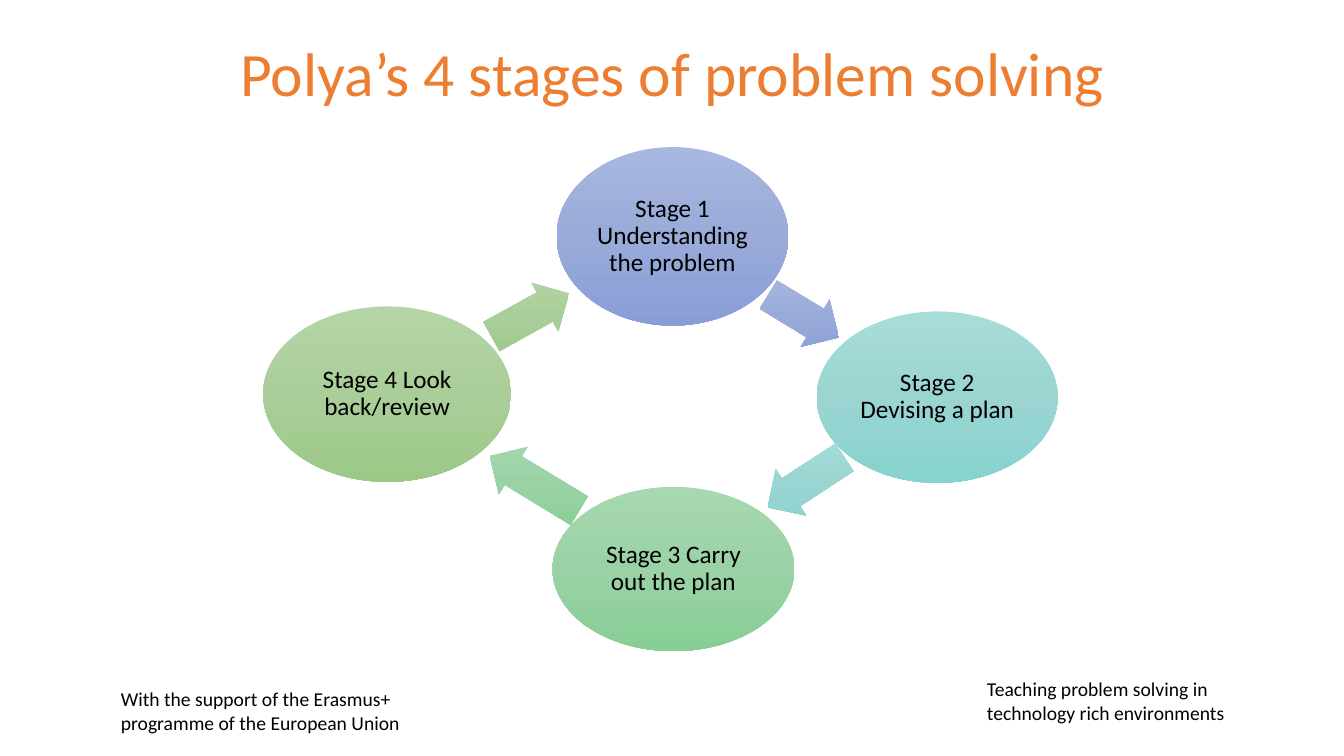
"""Build a slide showing Polya's four-stage problem solving cycle."""
from copy import deepcopy

from pptx import Presentation
from pptx.dml.color import RGBColor
from pptx.enum.shapes import MSO_SHAPE
from pptx.enum.text import MSO_ANCHOR, PP_ALIGN
from pptx.oxml.ns import qn
from pptx.util import Inches, Pt

OVAL, ARROW = MSO_SHAPE.OVAL, MSO_SHAPE.RIGHT_ARROW
MIDDLE, TOP = MSO_ANCHOR.MIDDLE, MSO_ANCHOR.TOP
CENTER, LEFT = PP_ALIGN.CENTER, PP_ALIGN.LEFT

FONT = "Calibri"
COLORS = {"title": "ED7D31", "text": "000000"}
GRADIENTS = {
    "blue": ("A8B7DF", "9AABD9", "889ED7"),
    "teal": ("A8DCD9", "9AD5D2", "87D3CF"),
    "green": ("A7D8B1", "9AD2A5", "87CE96"),
    "olive": ("B5D5A7", "AACE9A", "9CC987"),
}
TITLE = ("Polya’s 4 stages of problem solving", (2.15, 0.33, 9.04, 0.85))
FOOTERS = [
    ("Teaching problem solving in technology rich environments", (9.69, 6.67, 2.58, 0.57)),
    ("With the support of the Erasmus+ programme of the European Union", (1.1, 6.77, 2.98, 0.58)),
]
STAGES = [
    ("Stage 1 Understanding the problem", "blue",
     (5.52, 1.46, 2.3, 1.77), (7.56, 2.86, 0.82, 0.55), 31.3),
    ("Stage 2 Devising a plan", "teal",
     (8.1, 3.09, 2.39, 1.7), (7.54, 4.51, 0.91, 0.55), 146.9),
    ("Stage 3 Carry out the plan", "green",
     (5.48, 4.83, 2.4, 1.63), (4.78, 4.52, 1.04, 0.55), 211.3),
    ("Stage 4 Look back/review", "olive",
     (2.61, 3.04, 2.46, 1.74), (4.82, 2.85, 0.88, 0.55), 331),
]


def write(holder, text, size, color="text", align=LEFT, anchor=TOP, spacing=1.0):
    frame = holder.text_frame
    frame.word_wrap = True
    frame.vertical_anchor = anchor
    paragraph = frame.paragraphs[0]
    paragraph.alignment = align
    paragraph.line_spacing = spacing
    run = paragraph.add_run()
    run.text = text
    run.font.name = FONT
    run.font.size = Pt(size)
    run.font.color.rgb = RGBColor.from_string(COLORS[color])
    return frame


def add_label(slide, text, box, size, **style):
    label = slide.shapes.add_textbox(*map(Inches, box))
    write(label, text, size, **style)


def add_gradient_shape(slide, preset, box, gradient):
    shape = slide.shapes.add_shape(preset, *map(Inches, box))
    shape.shadow.inherit = False
    shape.line.fill.background()
    shape.fill.gradient()
    shape.fill.gradient_angle = 270
    grad_fill = shape._element.spPr.find(qn("a:gradFill"))
    grad_fill.set("rotWithShape", "0")
    first = grad_fill.find(qn("a:gsLst"))[0]
    first.addnext(deepcopy(first))
    for stop, position, color in zip(shape.fill.gradient_stops, (0, 0.5, 1), GRADIENTS[gradient]):
        stop.position = position
        stop.color.rgb = RGBColor.from_string(color)
    return shape


def add_stage(slide, text, gradient, oval_box, arrow_box, angle):
    oval = add_gradient_shape(slide, OVAL, oval_box, gradient)
    frame = write(oval, text, 18, align=CENTER, anchor=MIDDLE, spacing=0.9)
    frame.margin_left = frame.margin_right = Inches(0.03)
    frame.margin_top = frame.margin_bottom = Inches(0.03)
    arrow = add_gradient_shape(slide, ARROW, arrow_box, gradient)
    arrow.adjustments[0] = 0.6
    arrow.adjustments[1] = 0.5
    arrow.rotation = angle


def main():
    deck = Presentation()
    deck.slide_width, deck.slide_height = Inches(13.33), Inches(7.5)
    slide = deck.slides.add_slide(deck.slide_layouts[6])
    for text, box in FOOTERS:
        add_label(slide, text, box, 14)
    add_label(slide, *TITLE, 44, color="title", align=CENTER, anchor=MIDDLE, spacing=0.9)
    for stage in STAGES:
        add_stage(slide, *stage)
    deck.save("out.pptx")


if __name__ == "__main__":
    main()
